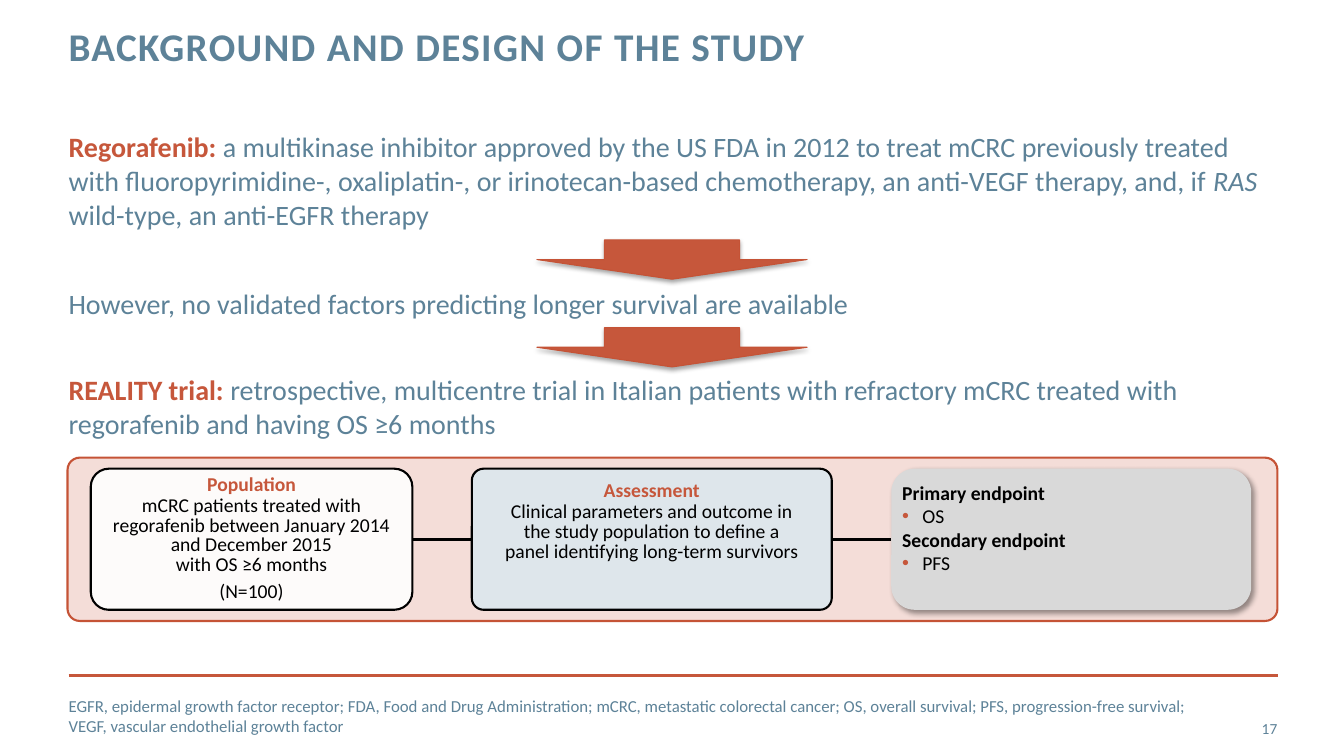
from lxml import etree
from pptx import Presentation
from pptx.dml.color import RGBColor
from pptx.enum.shapes import MSO_CONNECTOR, MSO_SHAPE
from pptx.enum.text import MSO_ANCHOR, MSO_AUTO_SIZE, PP_ALIGN
from pptx.oxml.ns import qn
from pptx.util import Inches, Pt

STRAIGHT = MSO_CONNECTOR.STRAIGHT
ROUNDED, DOWN_ARROW = MSO_SHAPE.ROUNDED_RECTANGLE, MSO_SHAPE.DOWN_ARROW
TOP, MIDDLE = MSO_ANCHOR.TOP, MSO_ANCHOR.MIDDLE
LEFT, CENTER, RIGHT = PP_ALIGN.LEFT, PP_ALIGN.CENTER, PP_ALIGN.RIGHT

COLORS = {
    "accent": "C6573B", "edge": "C55336", "blue": "5D8298", "black": "000000",
    "panel": "F4DDD8", "cream": "FDFBFA", "ice": "DEE6EB", "grey": "D9D9D9",
}
FONT = "Calibri"
TITLE = "BACKGROUND AND DESIGN OF THE STUDY"
STATEMENTS = [
    (1.24, 11.99, 1.1, [
        ("Regorafenib: ", "accent", "bold"),
        ("a multikinase inhibitor approved by the US FDA in 2012 to treat mCRC previously "
         "treated with fluoropyrimidine-, oxaliplatin-, or irinotecan-based chemotherapy, "
         "an anti-VEGF therapy, and, if ", "blue", ""),
        ("RAS", "blue", "italic"),
        (" wild-type, an anti-EGFR therapy", "blue", "")]),
    (2.79, 8.07, 0.44, [
        ("However, no validated factors predicting longer survival are available", "blue", "")]),
    (3.65, 12.22, 0.77, [
        ("REALITY trial: ", "accent", "bold"),
        ("retrospective, multicentre trial in Italian patients with refractory mCRC treated "
         "with regorafenib and having OS ≥6 months", "blue", "")]),
]
STAGES = [
    {"left": 0.9, "width": 3.19, "corner": 0.128, "fill": "cream", "anchor": MIDDLE,
     "inset": 0.05, "heading": "Population",
     "details": ["mCRC patients treated with regorafenib between January 2014 "
                 "and December 2015\nwith OS ≥6 months", "(N=100)"]},
    {"left": 4.68, "width": 3.57, "corner": 0.084, "fill": "ice", "anchor": TOP,
     "inset": 0.1, "heading": "Assessment",
     "details": ["Clinical parameters and outcome in\nthe study population to define a\n"
                 "panel identifying long-term survivors"]},
]
ENDPOINTS = [("Primary endpoint", "OS"), ("Secondary endpoint", "PFS")]
FOOTNOTE = ("EGFR, epidermal growth factor receptor; FDA, Food and Drug Administration; "
            "mCRC, metastatic colorectal cancer; OS, overall survival; PFS, progression-free "
            "survival; VEGF, vascular endothelial growth factor")
PAGE = "17"

WIDTH, HEIGHT = 13.33, 7.5
MARGIN, CONTENT = 0.68, 12
STAGE_TOP, STAGE_HEIGHT = 4.65, 1.4
ENDPOINT_LEFT, ENDPOINT_WIDTH = 8.84, 3.57
ARROW_TOP, ARROW_STEP, ARROW_WIDTH, ARROW_HEIGHT = 2.38, 0.87, 2.68, 0.39


def color(name):
    return RGBColor.from_string(COLORS[name])


def style(run, size, shade, emphasis=""):
    font = run.font
    font.name, font.size = FONT, Pt(size)
    font.bold, font.italic = emphasis == "bold", emphasis == "italic"
    font.color.rgb = color(shade)


def fill_paragraph(paragraph, text, size, shade, emphasis="", align=LEFT):
    paragraph.text = text
    paragraph.alignment = align
    for run in paragraph.runs:
        style(run, size, shade, emphasis)


def set_frame(shape, anchor, insets):
    frame = shape.text_frame
    frame.word_wrap = True
    frame.auto_size = MSO_AUTO_SIZE.NONE
    frame.vertical_anchor = anchor
    frame.margin_left, frame.margin_top, frame.margin_right, frame.margin_bottom = map(Inches, insets)
    return frame


def add_text_box(slide, box, anchor, insets=(0, 0, 0, 0)):
    return set_frame(slide.shapes.add_textbox(*map(Inches, box)), anchor, insets)


def add_shape(slide, preset, box, fill, line=None, weight=1.5, corner=None):
    shape = slide.shapes.add_shape(preset, *map(Inches, box))
    shape.shadow.inherit = False
    shape.fill.solid()
    shape.fill.fore_color.rgb = color(fill)
    if line:
        shape.line.color.rgb = color(line)
        shape.line.width = Pt(weight)
    else:
        shape.line.fill.background()
    if corner:
        shape.adjustments[0] = corner
    return shape


def add_shadow(shape, opacity, blur, distance, angle):
    effects = shape._element.spPr.find(qn("a:effectLst"))
    shadow = etree.SubElement(effects, qn("a:outerShdw"), blurRad=str(Pt(blur)),
                              dist=str(Pt(distance)), dir=str(angle * 60000), rotWithShape="0")
    shade = etree.SubElement(shadow, qn("a:srgbClr"), val=COLORS["black"])
    etree.SubElement(shade, qn("a:alpha"), val=str(opacity * 1000))


def add_line(slide, points, shade, weight):
    line = slide.shapes.add_connector(STRAIGHT, *map(Inches, points))
    line.line.color.rgb = color(shade)
    line.line.width = Pt(weight)
    etree.SubElement(line._element.spPr, qn("a:effectLst"))
    return line


def add_bullet(paragraph):
    properties = paragraph._p.get_or_add_pPr()
    properties.set("marL", str(Inches(0.2)))
    properties.set("indent", str(Inches(-0.2)))
    bullet_color = etree.SubElement(properties, qn("a:buClr"))
    etree.SubElement(bullet_color, qn("a:srgbClr"), val=COLORS["accent"])
    etree.SubElement(properties, qn("a:buFont"), typeface="Arial")
    etree.SubElement(properties, qn("a:buChar"), char="•")


def add_title(slide):
    title = slide.shapes.title
    title.left, title.top, title.width, title.height = map(Inches, (MARGIN, 0.27, 9.56, 0.88))
    paragraph = set_frame(title, TOP, (0, 0, 0, 0)).paragraphs[0]
    fill_paragraph(paragraph, TITLE, 28, "blue", "bold")
    paragraph.line_spacing = Pt(30)
    paragraph.runs[0]._r.get_or_add_rPr().set("spc", "100")


def add_statements(slide):
    for top, width, height, pieces in STATEMENTS:
        frame = add_text_box(slide, (MARGIN, top, width, height), TOP, (0, 0.05, 0, 0.05))
        for text, shade, emphasis in pieces:
            run = frame.paragraphs[0].add_run()
            run.text = text
            style(run, 20, shade, emphasis)
    for index in range(len(STATEMENTS) - 1):
        box = ((WIDTH - ARROW_WIDTH) / 2, ARROW_TOP + index * ARROW_STEP, ARROW_WIDTH, ARROW_HEIGHT)
        arrow = add_shape(slide, DOWN_ARROW, box, "accent", "edge", 0.75)
        add_shadow(arrow, 35, 3.1, 1.8, 90)


def add_stage(slide, stage):
    box = (stage["left"], STAGE_TOP, stage["width"], STAGE_HEIGHT)
    shape = add_shape(slide, ROUNDED, box, stage["fill"], "black", corner=stage["corner"])
    frame = set_frame(shape, stage["anchor"], (0.05, stage["inset"], 0.05, 0.05))
    fill_paragraph(frame.paragraphs[0], stage["heading"], 14, "accent", "bold", CENTER)
    for detail in stage["details"]:
        paragraph = frame.add_paragraph()
        fill_paragraph(paragraph, detail, 14, "black", align=CENTER)
        paragraph.space_before, paragraph.space_after = Pt(1), Pt(4.5)
    for paragraph in frame.paragraphs:
        paragraph.line_spacing = Pt(14)
    return shape


def add_endpoints(slide):
    box = (ENDPOINT_LEFT, STAGE_TOP, ENDPOINT_WIDTH, STAGE_HEIGHT)
    shape = add_shape(slide, ROUNDED, box, "grey")
    add_shadow(shape, 40, 4, 3, 45)
    frame = set_frame(shape, TOP, (0.04, 0.05, 0.04, 0.05))
    for index, (heading, measure) in enumerate(ENDPOINTS):
        paragraph = frame.add_paragraph() if index else frame.paragraphs[0]
        fill_paragraph(paragraph, heading, 14, "black", "bold")
        paragraph = frame.add_paragraph()
        add_bullet(paragraph)
        fill_paragraph(paragraph, measure, 14, "black")
    return shape


def add_design(slide):
    add_shape(slide, ROUNDED, (MARGIN - 0.01, 4.54, CONTENT, 1.62), "panel", "edge", corner=0.075)
    boxes = [add_stage(slide, stage) for stage in STAGES] + [add_endpoints(slide)]
    for source, target in zip(boxes, boxes[1:]):
        link = add_line(slide, (0, 0, 1, 1), "black", 1.75)
        link.begin_connect(source, 3)
        link.end_connect(target, 1)


def add_footer(slide):
    add_line(slide, (MARGIN, 6.7, MARGIN + CONTENT, 6.7), "accent", 2)
    footnote = add_text_box(slide, (MARGIN, 6.9, 11.19, 0.4), MIDDLE)
    fill_paragraph(footnote.paragraphs[0], FOOTNOTE, 12, "blue")
    page = add_text_box(slide, (MARGIN + CONTENT - 0.87, 7.03, 0.86, 0.4), MIDDLE)
    fill_paragraph(page.paragraphs[0], PAGE, 11, "blue", align=RIGHT)


def main():
    presentation = Presentation()
    presentation.slide_width, presentation.slide_height = Inches(WIDTH), Inches(HEIGHT)
    slide = presentation.slides.add_slide(presentation.slide_layouts[5])
    add_title(slide)
    add_statements(slide)
    add_design(slide)
    add_footer(slide)
    presentation.save("out.pptx")


if __name__ == "__main__":
    main()
